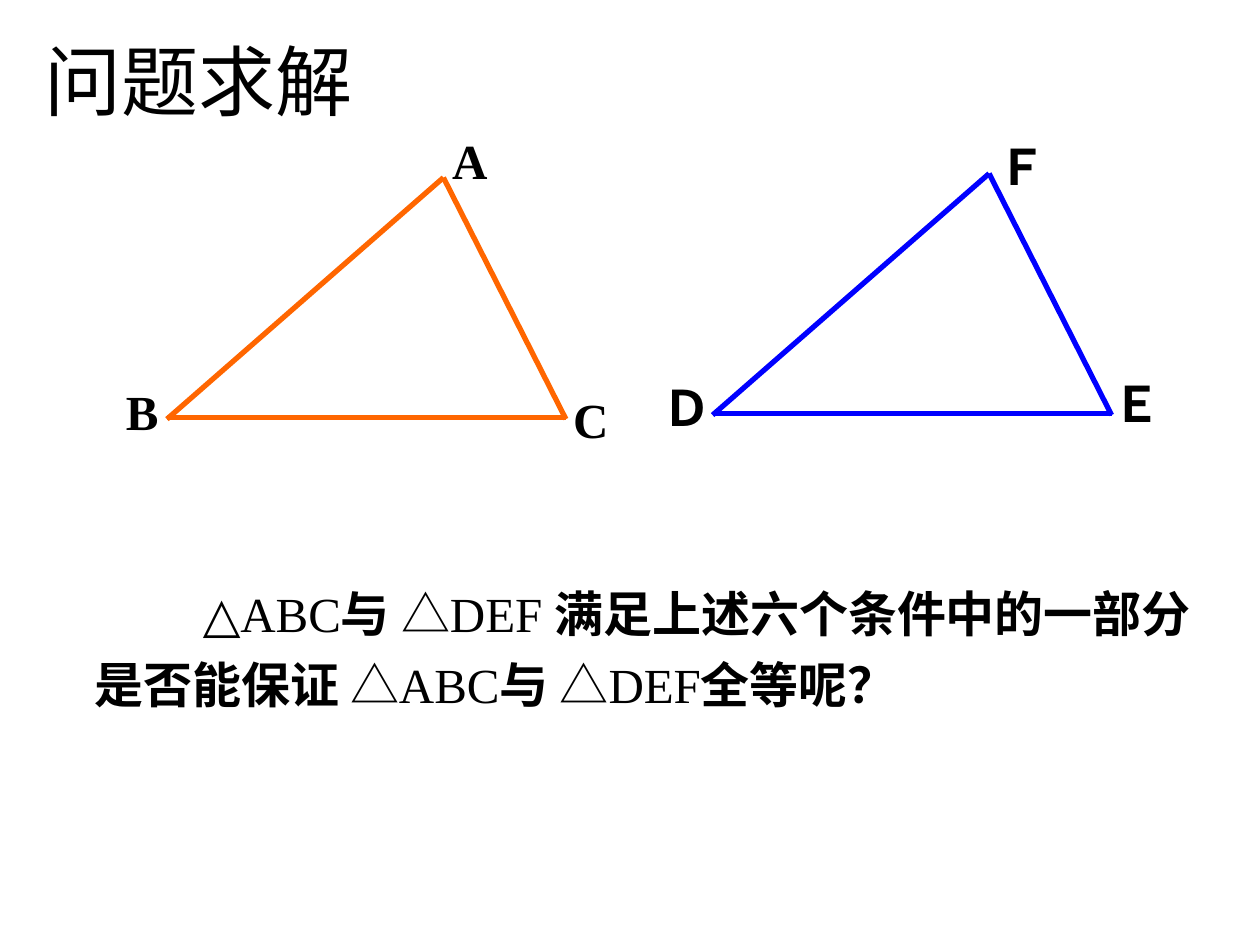
from lxml import etree
from pptx import Presentation
from pptx.dml.color import RGBColor
from pptx.enum.shapes import MSO_CONNECTOR
from pptx.enum.text import MSO_ANCHOR, PP_ALIGN
from pptx.oxml.ns import qn
from pptx.util import Pt

STRAIGHT = MSO_CONNECTOR.STRAIGHT
MIDDLE = MSO_ANCHOR.MIDDLE
CENTER = PP_ALIGN.CENTER

THEME = {
    "latin": "Times New Roman",
    "asian": "Noto Sans CJK SC",
    "text": RGBColor(0x00, 0x00, 0x00),
    "orange": RGBColor(0xFF, 0x66, 0x00),
    "blue": RGBColor(0x00, 0x00, 0xFF),
    "title_size": Pt(44),
    "body_size": Pt(28),
    "line_width": Pt(3),
}


def add_run(paragraph, text, size, latin, bold=False):
    run = paragraph.add_run()
    run.text = text
    run.font.size = size
    run.font.bold = bold
    run.font.name = latin
    run.font.color.rgb = THEME["text"]
    asian = etree.SubElement(run.font._element, qn("a:ea"))
    asian.set("typeface", THEME["asian"])


def add_text_box(left, top, width, height, wrap=True):
    box = slide.shapes.add_textbox(Pt(left), Pt(top), Pt(width), Pt(height))
    box.text_frame.word_wrap = wrap
    return box.text_frame.paragraphs[0]


presentation = Presentation()
presentation.slide_width = Pt(720)
presentation.slide_height = Pt(540)
slide = presentation.slides.add_slide(presentation.slide_layouts[5])

# Title
title = slide.shapes.title
title.left, title.top, title.width, title.height = Pt(15.8), Pt(17.3), Pt(195.2), Pt(56.2)
title.text_frame.vertical_anchor = MIDDLE
title_paragraph = title.text_frame.paragraphs[0]
title_paragraph.alignment = CENTER
add_run(title_paragraph, "问题求解", THEME["title_size"], THEME["asian"])

# Two congruent triangles, each placed by its apex
base_left, base_right, base_drop, side_drop = -158, 70, 137, 138
for apex_x, apex_y, color in [(253.4, 101.5, "orange"), (565.2, 99.2, "blue")]:
    left, right = apex_x + base_left, apex_x + base_right
    base_y, side_y = apex_y + base_drop, apex_y + side_drop
    for x1, y1, x2, y2 in [
        (left, base_y, right, base_y),
        (apex_x, apex_y, left, side_y),
        (apex_x, apex_y, right, side_y),
    ]:
        side = slide.shapes.add_connector(STRAIGHT, Pt(x1), Pt(y1), Pt(x2), Pt(y2))
        side.line.color.rgb = THEME[color]
        side.line.width = THEME["line_width"]
        etree.SubElement(side._element.spPr, qn("a:effectLst"))

# Vertex labels
for letter, left, top, width, wrap in [
    ("A", 251.3, 71.3, 54, True),
    ("B", 64.8, 214.6, 33.1, False),
    ("C", 320.4, 218.9, 30.2, True),
    ("Ｄ", 371.5, 212.4, 43.2, False),
    ("Ｅ", 628.6, 210.2, 43.2, False),
    ("Ｆ", 563, 74.2, 43.2, False),
]:
    label = add_text_box(left, top, width, 41, wrap)
    add_run(label, letter, THEME["body_size"], THEME["latin"], bold=True)

# Question, with an indented first line
question = add_text_box(46.8, 323.3, 646.6, 88.6)
question.line_spacing = 1.2
question._p.get_or_add_pPr().set("indent", str(Pt(62)))
for text, bold in [
    ("△ABC", False),
    ("与 ", True),
    ("△DEF", False),
    (" 满足上述六个条件中的一部分是否能保证 ", True),
    ("△ABC", False),
    ("与 ", True),
    ("△DEF", False),
    ("全等呢？", True),
]:
    add_run(question, text, THEME["body_size"], THEME["latin"], bold)

presentation.save("out.pptx")
